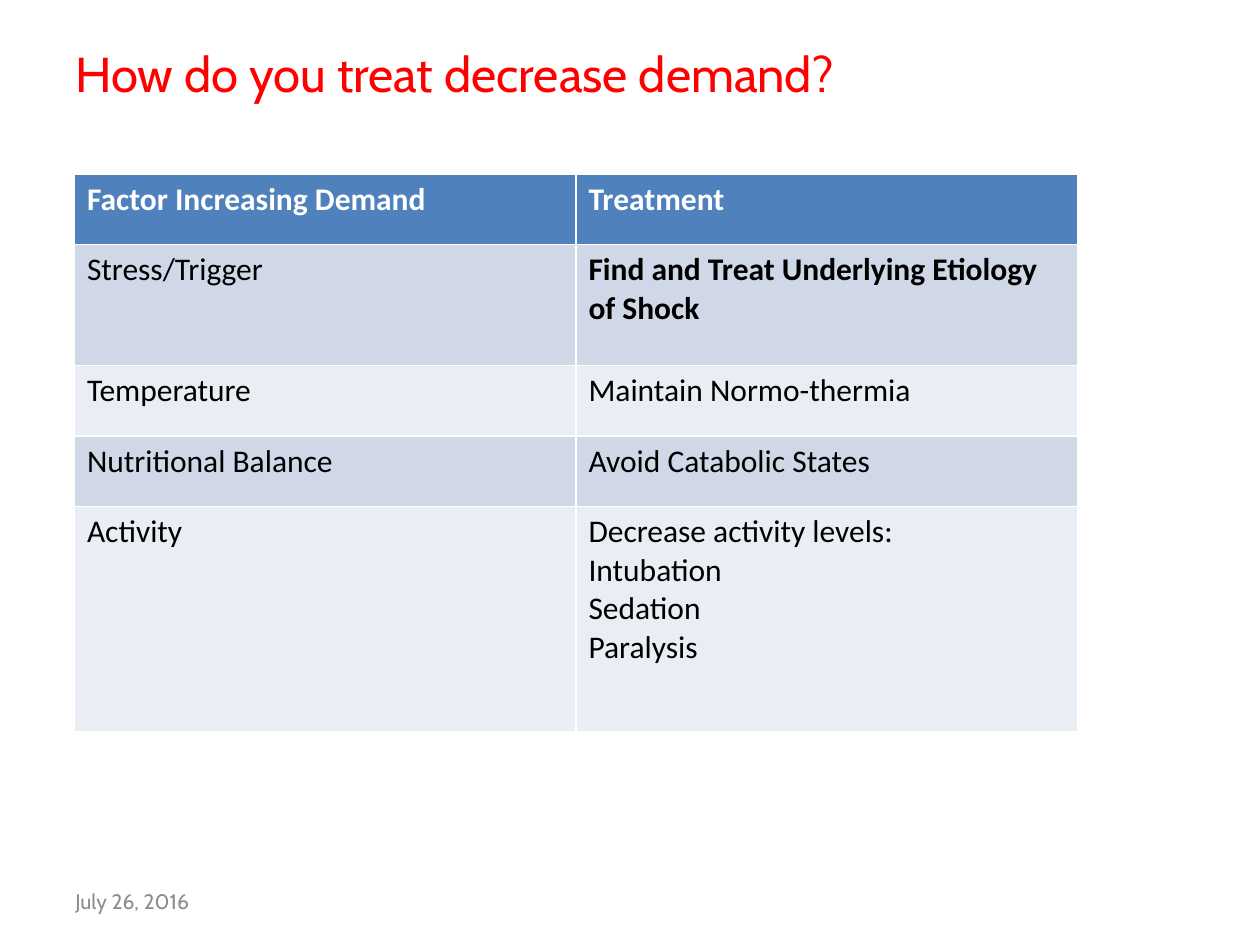
"""Build the slide on treatments that decrease oxygen demand in shock."""
from pptx import Presentation
from pptx import util as u
from pptx.dml.color import RGBColor
from pptx.enum import text

RED = RGBColor(0xFF, 0x00, 0x00)
GREY = RGBColor(0x8C, 0x8C, 0x8C)
WHITE = RGBColor(0xFF, 0xFF, 0xFF)
BLACK = RGBColor(0x00, 0x00, 0x00)
HEADER_BLUE = RGBColor(0x4F, 0x81, 0xBD)
BANDS = (RGBColor(0xE9, 0xED, 0xF4), RGBColor(0xD0, 0xD8, 0xE8))

ROWS = (
    (1.42, "Factor Increasing Demand", "Treatment"),
    (2.44, "Stress/Trigger", "Find and Treat Underlying Etiology of Shock"),
    (1.42, "Temperature", "Maintain Normo-thermia"),
    (1.42, "Nutritional Balance", "Avoid Catabolic States"),
    (4.54, "Activity", "Decrease activity levels:\nIntubation\nSedation\nParalysis"),
)
BOLD_CELLS = {(0, 0), (0, 1), (1, 1)}


def style_font(font, name, size, color, bold=False):
    font.name = name
    font.size = u.Pt(size)
    font.color.rgb = color
    font.bold = bold


def add_label(page, wording, left, top, width, height, size, color, anchor):
    box = page.shapes.add_textbox(u.Cm(left), u.Cm(top), u.Cm(width), u.Cm(height))
    frame = box.text_frame
    frame.word_wrap = True
    frame.vertical_anchor = anchor
    para = frame.paragraphs[0]
    para.text = wording
    style_font(para.font, "Cabin", size, color)


def fill_cell(cell, wording, row, column):
    cell.fill.solid()
    cell.fill.fore_color.rgb = BANDS[row % 2] if row else HEADER_BLUE
    cell.text = wording
    for para in cell.text_frame.paragraphs:
        style_font(para.font, "Calibri", 18, BLACK if row else WHITE,
                   (row, column) in BOLD_CELLS)


def add_treatment_table(page, left, top, column_width):
    height = sum(row[0] for row in ROWS)
    table = page.shapes.add_table(len(ROWS), 2, u.Cm(left), u.Cm(top),
                                  u.Cm(2 * column_width), u.Cm(height)).table
    for row, (row_height, *wordings) in enumerate(ROWS):
        table.rows[row].height = u.Cm(row_height)
        for column, wording in enumerate(wordings):
            fill_cell(table.cell(row, column), wording, row, column)


def main():
    deck = Presentation()
    deck.slide_width, deck.slide_height = u.Cm(25.4), u.Cm(19.05)
    page = deck.slides.add_slide(deck.slide_layouts[6])
    add_label(page, "How do you treat decrease demand?", 1.27, 0.76, 22.86, 3.18,
              28, RED, text.MSO_ANCHOR.TOP)
    add_label(page, "July 26, 2016", 1.27, 17.65, 5.92, 1.02,
              12, GREY, text.MSO_ANCHOR.MIDDLE)
    add_treatment_table(page, 1.5, 3.51, 10.11)
    deck.save("out.pptx")


if __name__ == "__main__":
    main()
